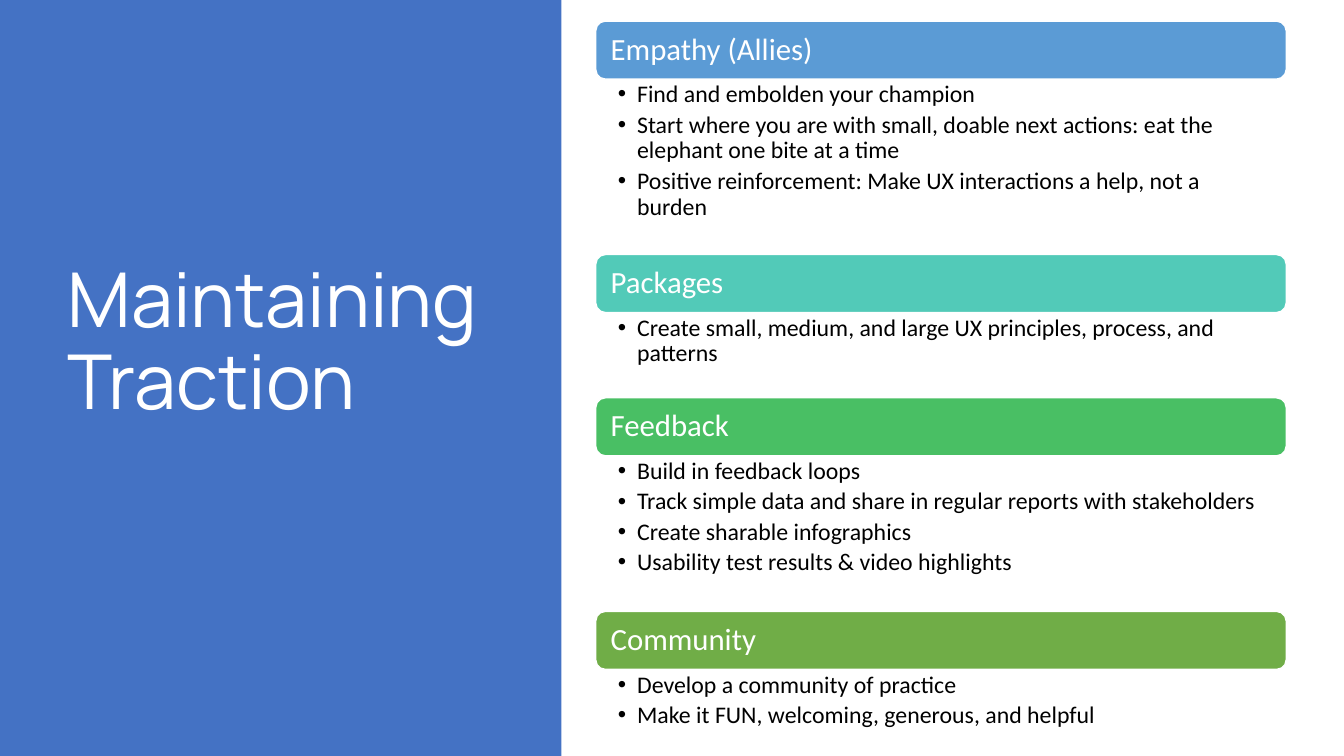
from dataclasses import dataclass

from lxml.etree import SubElement
from pptx import Presentation
from pptx.dml.color import RGBColor
from pptx.enum.shapes import MSO_SHAPE as Shape
from pptx.enum.text import MSO_ANCHOR as Anchor, PP_ALIGN as Align
from pptx.oxml.ns import qn
from pptx.util import Inches, Pt


@dataclass(frozen=True)
class Theme:
    panel: str = "4472C4"
    light: str = "FFFFFF"
    ink: str = "000000"
    title_font: str = "Manrope"
    body_font: str = "Calibri"
    title_size: int = 54
    heading_size: int = 22
    bullet_size: int = 17
    line_spacing: float = 0.9


class Deck:
    """Style and current slide, placed on a 40 by 40 grid."""

    GRID = 40

    def __init__(self, theme):
        self.theme = theme
        self.prs = Presentation()
        self.prs.slide_width, self.prs.slide_height = Inches(13.33), Inches(7.5)
        self.s = self.prs.slides.add_slide(self.prs.slide_layouts[5])

    def box(self, col, row, cols, rows):
        w, h = self.prs.slide_width / self.GRID, self.prs.slide_height / self.GRID
        return int(col * w), int(row * h), int(cols * w), int(rows * h)

    def frame(self, sp, anchor, left, top, right, bottom):
        tf = sp.text_frame
        tf.word_wrap = True
        tf.vertical_anchor = anchor
        tf.margin_left, tf.margin_top = Inches(left), Inches(top)
        tf.margin_right, tf.margin_bottom = Inches(right), Inches(bottom)
        return tf

    def add_text(self, p, text, font, size, color, after=0):
        p.alignment = Align.LEFT
        p.line_spacing = self.theme.line_spacing
        p.space_after = Pt(after)
        r = p.add_run()
        r.text = text
        r.font.name, r.font.size = font, Pt(size)
        r.font.color.rgb = RGBColor.from_string(color)

    def block(self, kind, place, fill, line=None):
        sp = self.s.shapes.add_shape(kind, *self.box(*place))
        sp.shadow.inherit = False
        sp.fill.solid()
        sp.fill.fore_color.rgb = RGBColor.from_string(fill)
        if line:
            sp.line.color.rgb = RGBColor.from_string(line)
            sp.line.width = Pt(1)
        else:
            sp.line.fill.background()
        return sp

    def title(self, place, text):
        t, sp = self.theme, self.s.shapes.title
        sp.left, sp.top, sp.width, sp.height = self.box(*place)
        tf = self.frame(sp, Anchor.MIDDLE, 0.1, 0.05, 0.1, 0.6)
        self.add_text(tf.paragraphs[0], text, t.title_font, t.title_size, t.light)
        # Bring the title in front of the panel
        sp._element.getparent().append(sp._element)

    def heading(self, place, text, fill):
        t = self.theme
        sp = self.block(Shape.ROUNDED_RECTANGLE, place, fill, t.light)
        tf = self.frame(sp, Anchor.MIDDLE, 0.12, 0.09, 0.12, 0.09)
        self.add_text(tf.paragraphs[0], text, t.body_font, t.heading_size, t.light)

    def bullets(self, place, items):
        t = self.theme
        sp = self.s.shapes.add_textbox(*self.box(*place))
        tf = self.frame(sp, Anchor.TOP, 0.22, 0.03, 0.17, 0.03)
        for i, item in enumerate(items):
            p = tf.add_paragraph() if i else tf.paragraphs[0]
            self.add_text(p, item, t.body_font, t.bullet_size, t.ink, after=3.4)
            pPr = p._p.get_or_add_pPr()
            pPr.set("marL", str(Inches(0.19)))
            pPr.set("indent", str(-Inches(0.19)))
            SubElement(pPr, qn("a:buFont")).set("typeface", "Arial")
            SubElement(pPr, qn("a:buChar")).set("char", "•")


# Heading, colour, rows taken by the bullets, bullets
SECTIONS = [
    ("Empathy (Allies)", "5B9BD5", 9.28, [
        "Find and embolden your champion",
        "Start where you are with small, doable next actions: eat the elephant one bite at a time",
        "Positive reinforcement: Make UX interactions a help, not a burden",
    ]),
    ("Packages", "52CAB8", 4.51, [
        "Create small, medium, and large UX principles, process, and patterns",
    ]),
    ("Feedback", "49BF64", 8.23, [
        "Build in feedback loops",
        "Track simple data and share in regular reports with stakeholders",
        "Create sharable infographics",
        "Usability test results & video highlights",
    ]),
    ("Community", "70AD47", 3.47, [
        "Develop a community of practice",
        "Make it FUN, welcoming, generous, and helpful",
    ]),
]
LIST_COL, LIST_COLS, LIST_ROW, BAR_ROWS = 17.73, 20.55, 1.12, 3.07


def main():
    deck = Deck(Theme())

    # Left panel with the title
    deck.block(Shape.RECTANGLE, (0, 0, 16.71, deck.GRID), deck.theme.panel)
    deck.title((1.71, 3.63, 14.4, 32.11), "Maintaining Traction")

    # Stacked sections on the right
    row = LIST_ROW
    for name, fill, rows, items in SECTIONS:
        deck.heading((LIST_COL, row, LIST_COLS, BAR_ROWS), name, fill)
        row += BAR_ROWS
        deck.bullets((LIST_COL, row, LIST_COLS, rows), items)
        row += rows

    deck.prs.save("out.pptx")


if __name__ == "__main__":
    main()
